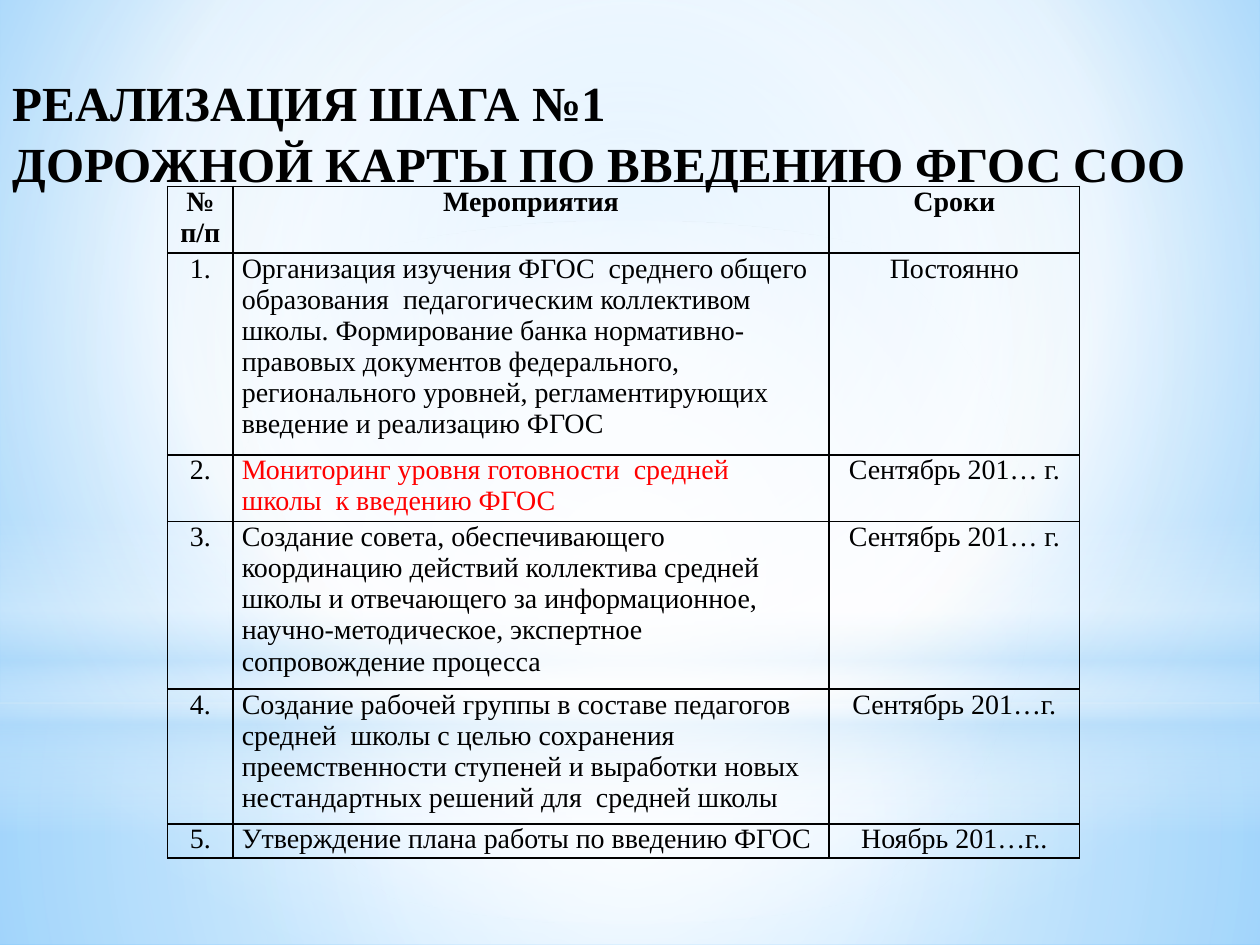
from lxml.etree import SubElement
from pptx import Presentation
from pptx.dml.color import RGBColor
from pptx.enum.shapes import MSO_SHAPE as Shape
from pptx.enum.text import MSO_ANCHOR as Anchor, MSO_AUTO_SIZE as AutoSize, PP_ALIGN as Align
from pptx.oxml.ns import qn
from pptx.util import Inches, Pt

COLORS = {
    "black": "000000", "red": "FF0000", "white": "FFFFFF", "mist": "B4DCFA",
    "sky": "9ED5FF", "blue": "5BB9FF",
}
CENTER = (50, 50, 50, 50)
SKY_STOPS = [(0, "sky", 100), (60, "white", 100), (100, "blue", 100)]
BACKDROPS = [
    (Shape.RECTANGLE, 5.58, 1.92, [(0, "white", 91), (37, "white", 76), (100, "mist", 79)], CENTER),
    (Shape.RECTANGLE, 0, 5.58, [(0, "white", 89), (48, "white", 62), (100, "mist", 79)], CENTER),
    (Shape.RECTANGLE, 4.12, 2.5, [(0, "white", 0), (29, "white", 30), (45, "mist", 40),
                                  (55, "white", 26), (65, "mist", 60), (100, "white", 0)], None),
    (Shape.OVAL, 1.75, 5.58, [(0, "white", 100), (56, "white", 0)], CENTER),
]
TITLE_LINES = ["РЕАЛИЗАЦИЯ ШАГА №1", "ДОРОЖНОЙ КАРТЫ ПО ВВЕДЕНИЮ ФГОС СОО"]
HEADERS = ("№ п/п", "Мероприятия", "Сроки")
ACTIVITIES = [
    ("Организация изучения ФГОС  среднего общего образования  педагогическим коллективом школы. "
     "Формирование банка нормативно-правовых документов федерального, регионального уровней, "
     "регламентирующих введение и реализацию ФГОС", "Постоянно"),
    ("Мониторинг уровня готовности  средней  школы  к введению ФГОС", "Сентябрь 201… г."),
    ("Создание совета, обеспечивающего координацию действий коллектива средней  школы и "
     "отвечающего за информационное, научно-методическое, экспертное сопровождение процесса",
     "Сентябрь 201… г."),
    ("Создание рабочей группы в составе педагогов средней  школы с целью сохранения "
     "преемственности ступеней и выработки новых нестандартных решений для  средней школы",
     "Сентябрь 201…г."),
    ("Утверждение плана работы по введению ФГОС", "Ноябрь 201…г.."),
]
HIGHLIGHTED_ROW = 2
COLUMN_WIDTHS = (0.52, 4.73, 1.99)
ROW_HEIGHTS = (0.53, 1.6, 0.53, 1.33, 1.07, 0.27)


class SlideBuilder:
    """Holds the text style and the current slide, and draws its elements."""

    def __init__(self, slide, font="Times New Roman"):
        self.slide = slide
        self.font = font

    def style(self, paragraph, size, color="black", bold=False, align=Align.LEFT):
        paragraph.alignment = align
        for run in paragraph.runs:
            run.font.name = self.font
            run.font.size = Pt(size)
            run.font.bold = bold
            run.font.color.rgb = RGBColor.from_string(COLORS[color])

    def gradient(self, fill, properties, stops, focus):
        fill.gradient()
        element = properties.find(qn("a:gradFill"))
        for child in list(element):
            element.remove(child)
        stop_list = SubElement(element, qn("a:gsLst"))
        for position, color, opacity in stops:
            stop = SubElement(stop_list, qn("a:gs"), pos=str(position * 1000))
            color_element = SubElement(stop, qn("a:srgbClr"), val=COLORS[color])
            SubElement(color_element, qn("a:alpha"), val=str(opacity * 1000))
        if focus:
            circle = SubElement(element, qn("a:path"), {"path": "circle"})
            sides = {side: str(value * 1000) for side, value in zip("ltrb", focus)}
            SubElement(circle, qn("a:fillToRect"), sides)
        else:
            SubElement(element, qn("a:lin"), ang=str(90 * 60000), scaled="0")

    def background(self, stops, focus):
        fill = self.slide.background.fill
        properties = self.slide.element.find(".//" + qn("p:bgPr"))
        self.gradient(fill, properties, stops, focus)

    def backdrop(self, kind, top, height, stops, focus):
        shape = self.slide.shapes.add_shape(kind, 0, Inches(top), Inches(10), Inches(height))
        shape.shadow.inherit = False
        shape.line.fill.background()
        self.gradient(shape.fill, shape.element.spPr, stops, focus)

    def title(self, lines, left, top, width, height):
        title = self.slide.shapes.title
        title.left, title.top = Inches(left), Inches(top)
        title.width, title.height = Inches(width), Inches(height)
        title.element.getparent().append(title.element)
        frame = title.text_frame
        frame.text = "\n".join(lines)
        frame.word_wrap = False
        frame.auto_size = AutoSize.NONE
        frame.vertical_anchor = Anchor.TOP
        frame.margin_top = Inches(0.08)
        for paragraph in frame.paragraphs:
            paragraph.line_spacing = 1.05
            paragraph.space_before = Pt(0)
            self.style(paragraph, 28, bold=True)

    def border(self, cell):
        properties = cell._tc.get_or_add_tcPr()
        for index, side in enumerate(("lnL", "lnR", "lnT", "lnB")):
            line = SubElement(properties, qn("a:" + side), w=str(Pt(1)))
            fill = SubElement(line, qn("a:solidFill"))
            SubElement(fill, qn("a:srgbClr"), val=COLORS["black"])
            properties.insert(index, line)

    def cell(self, cell, text, **style):
        cell.text = text
        cell.margin_left = cell.margin_right = Inches(0.07)
        cell.margin_top = cell.margin_bottom = 0
        cell.fill.background()
        self.border(cell)
        self.style(cell.text_frame.paragraphs[0], 16, **style)

    def table(self, rows, left, top, widths, heights):
        frame = self.slide.shapes.add_table(len(rows), len(widths), Inches(left), Inches(top),
                                            Inches(sum(widths)), Inches(sum(heights)))
        table = frame.table
        table.first_row = table.horz_banding = False
        for column, width in zip(table.columns, widths):
            column.width = Inches(width)
        for row, height in zip(table.rows, heights):
            row.height = Inches(height)
        for row_index, values in enumerate(rows):
            for column_index, text in enumerate(values):
                is_header = row_index == 0
                is_activity = column_index == 1 and not is_header
                self.cell(
                    table.cell(row_index, column_index), text, bold=is_header,
                    color="red" if is_activity and row_index == HIGHLIGHTED_ROW else "black",
                    align=Align.LEFT if is_activity else Align.CENTER)


def main():
    presentation = Presentation()
    presentation.slide_width, presentation.slide_height = Inches(10), Inches(7.5)
    builder = SlideBuilder(presentation.slides.add_slide(presentation.slide_layouts[5]))
    builder.background(SKY_STOPS, (20, 10, 20, 60))
    for backdrop in BACKDROPS:
        builder.backdrop(*backdrop)
    builder.title(TITLE_LINES, 0, 0.47, 9.61, 1.51)
    rows = [HEADERS] + [(f"{number}.", *activity) for number, activity in enumerate(ACTIVITIES, 1)]
    builder.table(rows, 1.33, 1.48, COLUMN_WIDTHS, ROW_HEIGHTS)
    presentation.save("out.pptx")


if __name__ == "__main__":
    main()
